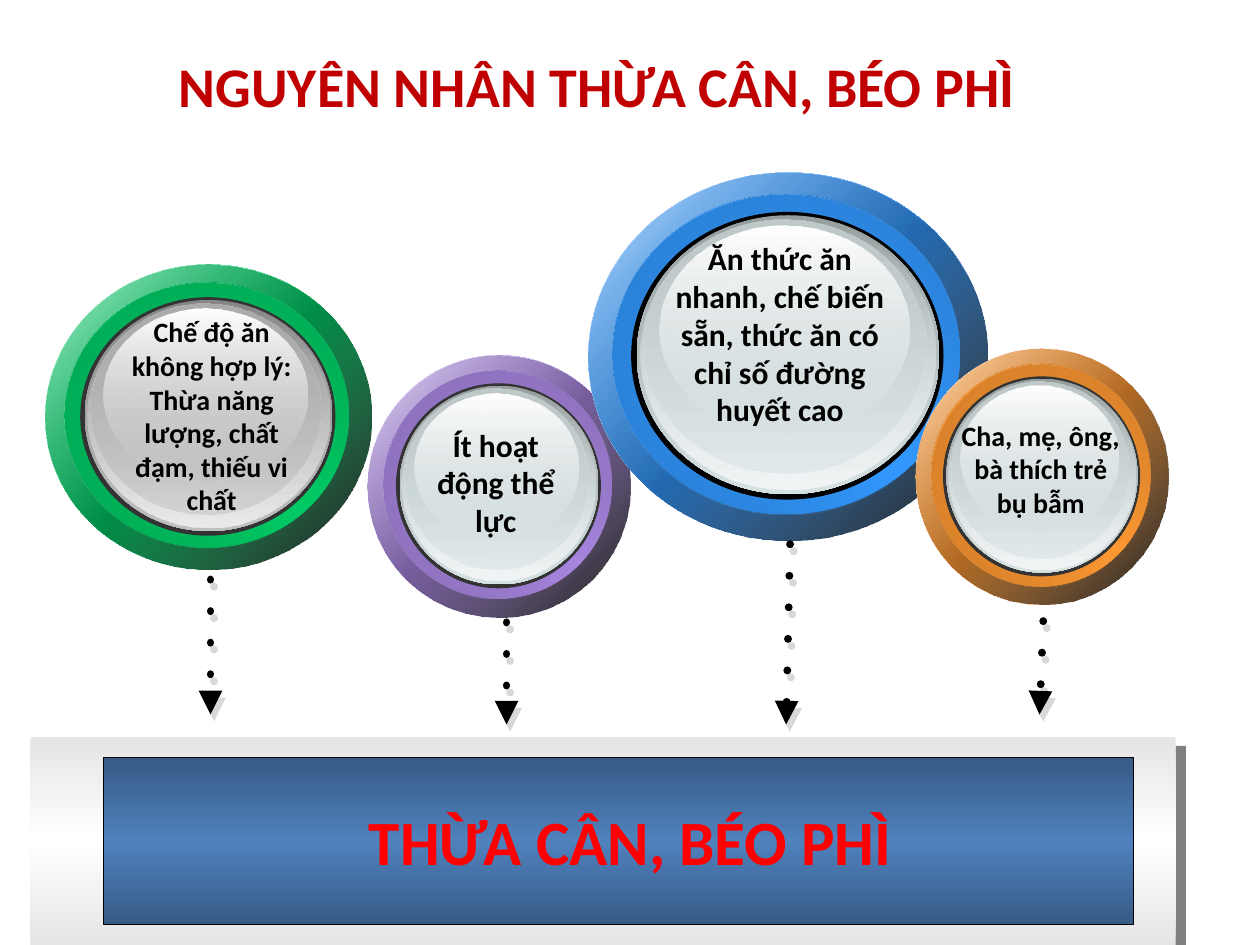
from dataclasses import dataclass

from lxml import etree
from pptx import Presentation
from pptx.dml.color import RGBColor
from pptx.enum.shapes import MSO_CONNECTOR, MSO_SHAPE
from pptx.enum.text import MSO_ANCHOR, MSO_AUTO_SIZE, PP_ALIGN
from pptx.oxml.ns import qn
from pptx.util import Inches, Pt

ELLIPSE, RECTANGLE = MSO_SHAPE.OVAL, MSO_SHAPE.RECTANGLE
STRAIGHT = MSO_CONNECTOR.STRAIGHT
TOP, CENTER = MSO_ANCHOR.TOP, PP_ALIGN.CENTER
FIT_SHAPE = MSO_AUTO_SIZE.SHAPE_TO_FIT_TEXT
COLUMNS, ROWS = 100, 75
CELL = Inches(0.1)


@dataclass(frozen=True)
class Theme:
    """Colours, type sizes and shadows of the slide."""
    font: str = "Calibri"
    title: str = "C00000"
    accent: str = "FF0000"
    ink: str = "000000"
    white: str = "FFFFFF"
    rim: str = "333333"
    silver: str = "E5E5E5"
    panel: str = "4F81BD"
    panel_edge: str = "375A85"
    green: str = "00CC66"
    purple: str = "A886E0"
    blue: str = "3399FF"
    orange: str = "FF9933"
    glass: str = "D6E1E2"
    grey_glass: str = "C0C0C0"
    title_size: int = 32
    banner_size: int = 36
    large_size: int = 18
    small_size: int = 16
    arrow_width: float = 4.5
    banner_shadow: tuple = ("000000", 50, 7.8, 40)
    arrow_shadow: tuple = ("B2B2B2", 50, 4.5, 63)
    label_shadow: tuple = ("C0C0C0", 100, 1.5, 45)
    accent_shadow: tuple = ("000000", 100, 2, 45)


THEME = Theme()


@dataclass(frozen=True)
class Box:
    """A rectangle in grid columns and rows."""
    left: float
    top: float
    width: float
    height: float

    def point(self, x, y):
        """Return the grid point at percentages of the box."""
        return self.left + self.width * x / 100, self.top + self.height * y / 100

    def inner(self, x, y, width, height):
        """Return a box given in percentages of this one."""
        return Box(*self.point(x, y), self.width * width / 100, self.height * height / 100)

    def lengths(self):
        """Return left, top, width and height as slide lengths."""
        return [round(value * CELL) for value in (self.left, self.top, self.width, self.height)]


def mix(color, target, share):
    """Blend a colour towards a target by a share."""
    pairs = zip(bytes.fromhex(color), bytes.fromhex(target))
    return "".join(f"{round(a + (b - a) * share):02X}" for a, b in pairs)


def add_color(parent, color, opacity=100):
    """Append a colour element with its opacity."""
    element = etree.SubElement(parent, qn("a:srgbClr"), val=color)
    if opacity < 100:
        etree.SubElement(element, qn("a:alpha"), val=str(opacity * 1000))


def add_shadow(effects, color, opacity, distance, angle):
    """Append an outer shadow to an effect list."""
    shadow = etree.SubElement(effects, qn("a:outerShdw"), dist=str(Pt(distance)),
                              dir=str(angle * 60000), algn="ctr", rotWithShape="0")
    add_color(shadow, color, opacity)


def set_gradient(shape, stops, angle):
    """Fill a shape with evenly spaced colour and opacity stops."""
    shape.fill.background()
    gradient = etree.Element(qn("a:gradFill"), rotWithShape="1")
    stop_list = etree.SubElement(gradient, qn("a:gsLst"))
    for index, (color, opacity) in enumerate(stops):
        position = round(100000 * index / (len(stops) - 1))
        add_color(etree.SubElement(stop_list, qn("a:gs"), pos=str(position)), color, opacity)
    etree.SubElement(gradient, qn("a:lin"), ang=str(angle * 60000), scaled="0")
    properties = shape.element.spPr
    properties.replace(properties.find(qn("a:noFill")), gradient)


def add_filled(slide, kind, box, stops, angle=90, line=None, shadow=None):
    """Add a preset shape with a gradient or a single colour."""
    shape = slide.shapes.add_shape(kind, *box.lengths())
    shape.shadow.inherit = False
    if line:
        shape.line.color.rgb = RGBColor.from_string(line)
        shape.line.width = Pt(0.75)
    else:
        shape.line.fill.background()
    if len(stops) > 1:
        set_gradient(shape, stops, angle)
    else:
        shape.fill.solid()
        shape.fill.fore_color.rgb = RGBColor.from_string(stops[0][0])
    if shadow:
        add_shadow(shape.element.spPr.find(qn("a:effectLst")), *shadow)


def add_text(slide, box, text, size, color, shadow=None, grow=True, spacing=None):
    """Add a centred bold text box."""
    frame = slide.shapes.add_textbox(*box.lengths()).text_frame
    frame.word_wrap = True
    frame.vertical_anchor = TOP
    if grow:
        frame.auto_size = FIT_SHAPE
    else:
        frame.margin_top = 0
    paragraph = frame.paragraphs[0]
    paragraph.alignment = CENTER
    paragraph.line_spacing = spacing
    run = paragraph.add_run()
    run.text = text
    run.font.size, run.font.bold = Pt(size), True
    run.font.name = THEME.font
    run.font.color.rgb = RGBColor.from_string(color)
    if shadow:
        effects = etree.Element(qn("a:effectLst"))
        add_shadow(effects, *shadow)
        run.font.fill._xPr.find(qn("a:solidFill")).addnext(effects)


def add_arrow(slide, start, end):
    """Add a dotted arrow between two grid points."""
    lengths = [round(value * CELL) for value in (*start, *end)]
    arrow = slide.shapes.add_connector(STRAIGHT, *lengths)
    arrow.line.color.rgb = RGBColor.from_string(THEME.ink)
    arrow.line.width = Pt(THEME.arrow_width)
    line = arrow.line._get_or_add_ln()
    line.set("cap", "rnd")
    etree.SubElement(line, qn("a:prstDash"), val="dot")
    etree.SubElement(line, qn("a:round"))
    etree.SubElement(line, qn("a:tailEnd"), type="triangle")
    effects = etree.SubElement(arrow.element.spPr, qn("a:effectLst"))
    add_shadow(effects, *THEME.arrow_shadow)


def add_badge(slide, box, color, glass, rim):
    """Stack the ring and glass layers of a round badge."""
    white, black = THEME.white, THEME.ink
    edge = mix(color, black, 0.25)
    whole, ring = (0, 0, 100, 100), (6, 5.9, 87, 86.9)
    layers = (
        (whole, 45, [(white, 100), (color, 100), (white, 100)]),
        (whole, 45, [(color, 32), (black, 90)]),
        (ring, 315, [(edge, 100), (color, 100), (edge, 100)]),
        (ring, 45, [(mix(color, black, 0.19), 100), (color, 0)]),
        ((10.7, 10.7, 78.2, 78.2), 90, [(rim, 100)]),
        ((12.1, 11.6, 75.8, 75.8), 90, [(mix(glass, black, 0.3), 100), (glass, 100)]),
        ((13, 12.1, 74, 74), 90, [(glass, 0), (mix(glass, white, 0.68), 100)]),
        ((13.9, 12.7, 70.4, 69.1), 90, [(mix(glass, black, 0.1), 100), (glass, 48)]),
        ((17.8, 14.5, 62.5, 56.2), 90, [(white, 100), (glass, 38)]),
    )
    for shares, angle, stops in layers:
        add_filled(slide, ELLIPSE, box.inner(*shares), stops, angle)


def add_cause(slide, box, text, label, arrow, size, color, glass=THEME.glass, rim=THEME.rim):
    """Add one cause: its badge, its arrow and its label."""
    add_badge(slide, box, color, glass, rim)
    add_arrow(slide, *(box.point(*end) for end in arrow))
    add_text(slide, box.inner(*label), text, size, THEME.ink, THEME.label_shadow)


def add_banner(slide, box, text):
    """Add the result banner with its inner panel."""
    for area, kind_line, shadow, outer, middle in (
            (box, None, THEME.banner_shadow, THEME.silver, THEME.white),
            (box.inner(6.4, 9.7, 89.9, 80.6), THEME.ink, None, THEME.panel_edge, THEME.panel)):
        stops = [(outer, 100), (middle, 100), (outer, 100)]
        add_filled(slide, RECTANGLE, area, stops, line=kind_line, shadow=shadow)
    add_text(slide, box.inner(12.5, 28.5, 79.8, 43), text, THEME.banner_size,
             THEME.accent, THEME.accent_shadow)


def main():
    """Build the slide and save it."""
    presentation = Presentation()
    presentation.slide_width, presentation.slide_height = COLUMNS * CELL, ROWS * CELL
    slide = presentation.slides.add_slide(presentation.slide_layouts[6])
    add_text(slide, Box(2.4, 4.7, 90, 9), "NGUYÊN NHÂN THỪA CÂN, BÉO PHÌ",
             THEME.title_size, THEME.title, grow=False, spacing=0.9)
    add_banner(slide, Box(2.4, 58.5, 90.9, 16.5), "THỪA CÂN, BÉO PHÌ")
    add_cause(slide, Box(29.2, 28.2, 20.8, 20.8), "Ít hoạt động thể lực",
              (17.3, 24.5, 63, 48.6), ((52.9, 101.9), (52.9, 140.9)),
              THEME.large_size, THEME.purple)
    add_cause(slide, Box(46.7, 13.7, 31.7, 29.2),
              "Ăn thức ăn nhanh, chế biến sẵn, thức ăn có chỉ số đường huyết cao",
              (16.4, 16.4, 63.1, 76), ((50.5, 101), (49.5, 150)),
              THEME.large_size, THEME.blue, rim=THEME.ink)
    add_cause(slide, Box(72.7, 27.7, 20, 20.3), "Cha, mẹ, ông, bà thích trẻ bụ bẫm",
              (12.5, 24.6, 74, 58.1), ((50.5, 106.4), (49, 142.9)),
              THEME.small_size, THEME.orange)
    add_cause(slide, Box(3.6, 21, 25.9, 24.2),
              "Chế độ ăn không hợp lý: Thừa năng lượng, chất đạm, thiếu vi chất",
              (22.4, 14.5, 57.1, 71.1), ((50.6, 103.3), (50.6, 147.5)),
              THEME.small_size, THEME.green, glass=THEME.grey_glass)
    presentation.save("out.pptx")


if __name__ == "__main__":
    main()
